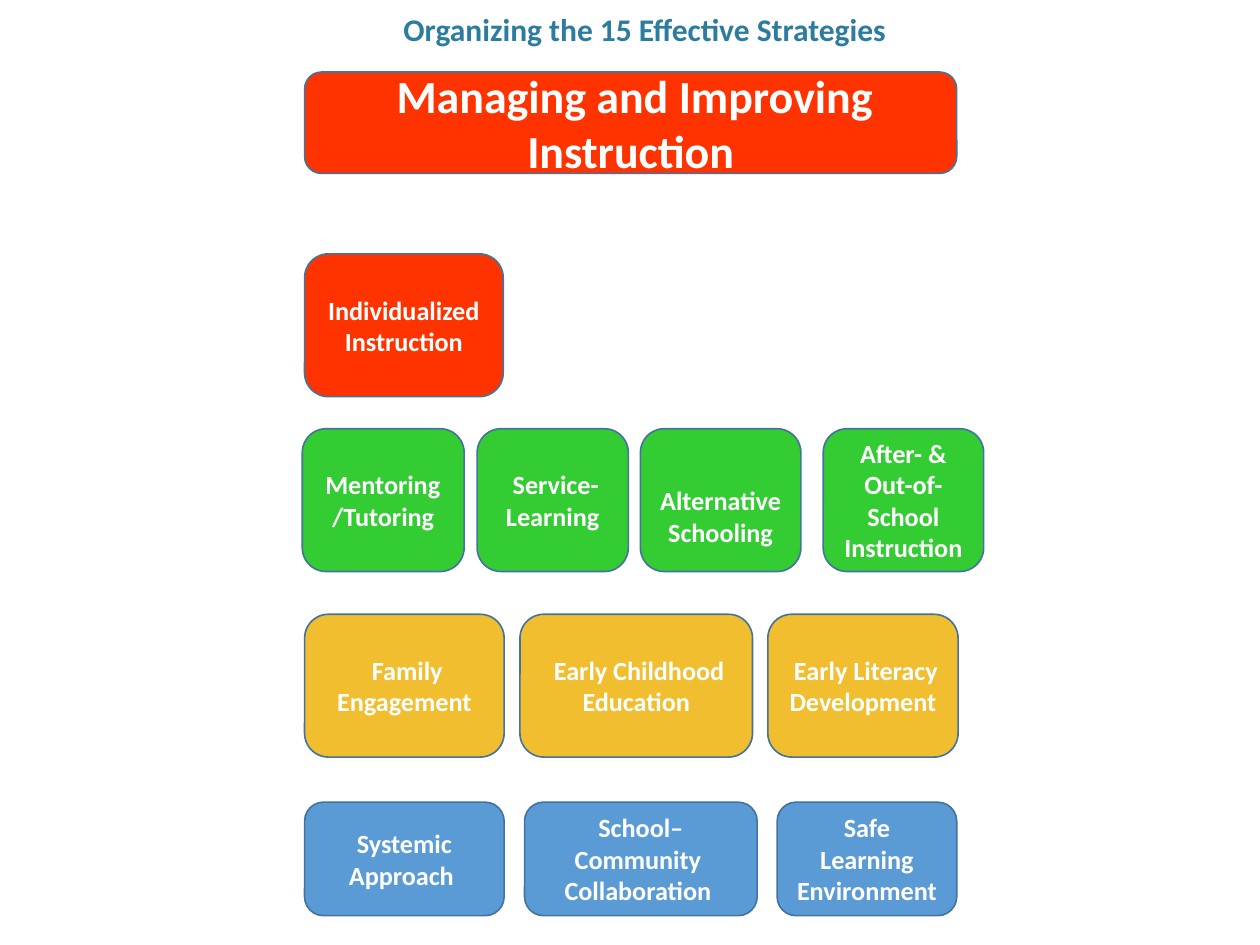
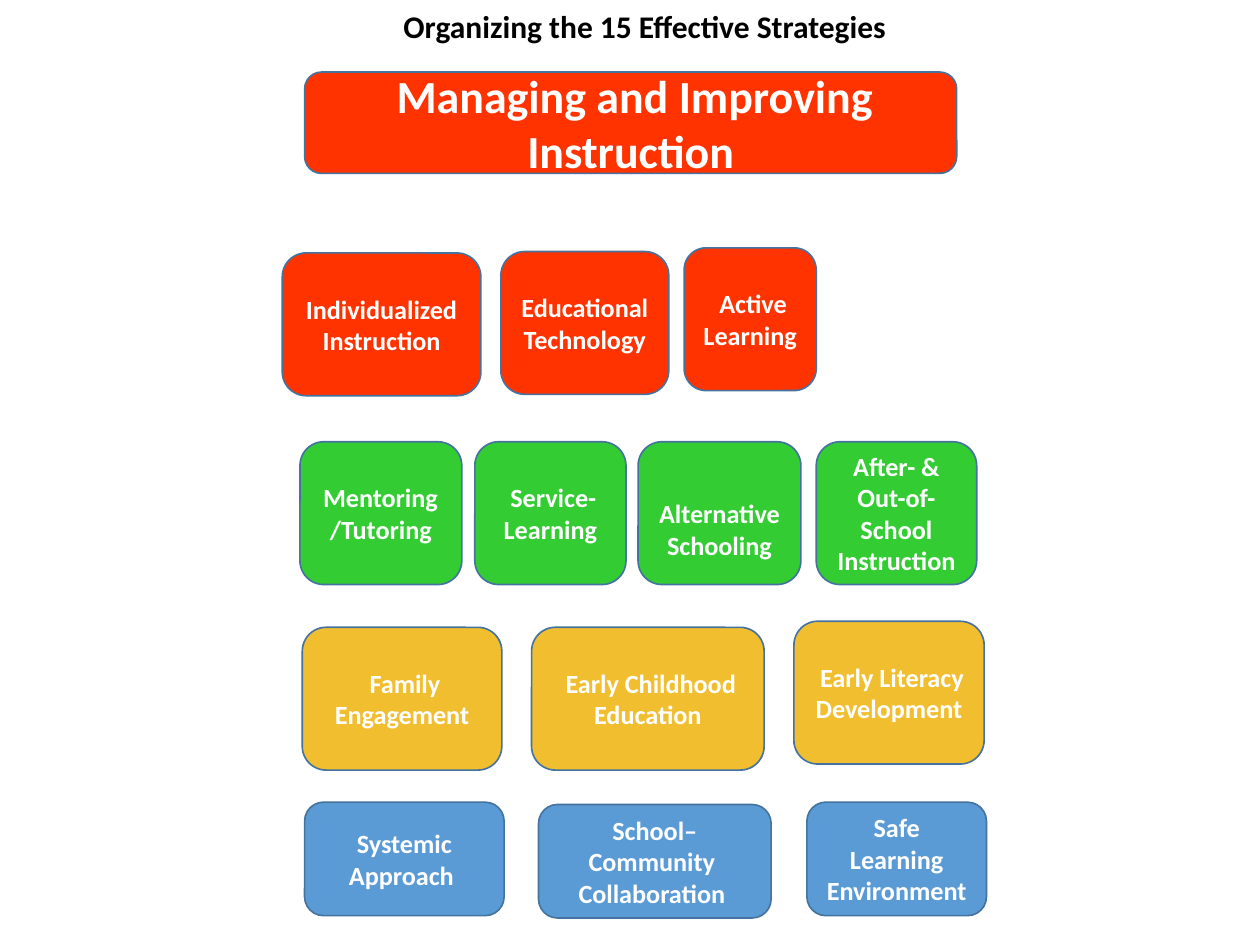
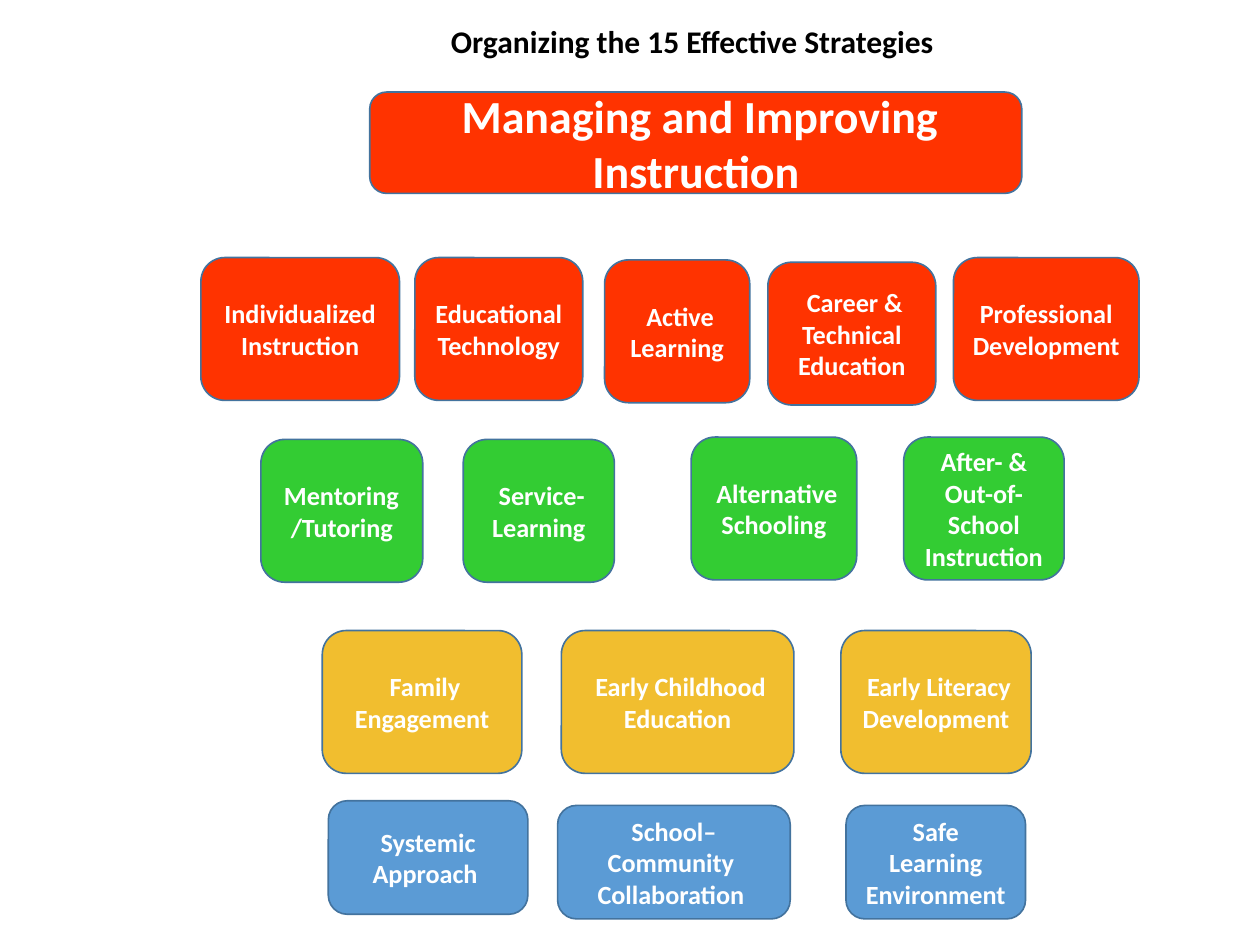
from pptx import Presentation
from pptx.dml.color import RGBColor
from pptx.enum.shapes import MSO_SHAPE
from pptx.enum.text import MSO_ANCHOR, MSO_AUTO_SIZE, PP_ALIGN
from pptx.util import Cm, Pt

ROUNDED = MSO_SHAPE.ROUNDED_RECTANGLE
CENTER = PP_ALIGN.CENTER
MIDDLE, BOTTOM = MSO_ANCHOR.MIDDLE, MSO_ANCHOR.BOTTOM
NO_FIT = MSO_AUTO_SIZE.NONE

RED = RGBColor(0xFF, 0x33, 0x00)
GREEN = RGBColor(0x33, 0xCC, 0x33)
GOLD = RGBColor(0xF1, 0xBE, 0x2F)
BLUE = RGBColor(0x5B, 0x9B, 0xD5)
OUTLINE = RGBColor(0x43, 0x73, 0x9E)
TEAL = RGBColor(0x2C, 0x7C, 0x9F)
BLACK = RGBColor(0, 0, 0)
WHITE = RGBColor(0xFF, 0xFF, 0xFF)
FONT = "Calibri"

TITLE = "Organizing the 15 Effective Strategies"
BANNER = "Managing and Improving Instruction"
TITLE_SIZE = (14.63, 1.02)
BANNER_SIZE = (14.02, 2.18)

# Strategy groups: colour, box height in cm, and (text, width in cm) per strategy
GROUPS = {
    "foundation": (BLUE, 2.44, [
        ("Systemic Approach ", 4.29),
        ("School– Community \nCollaboration ", 5.0),
        ("Safe Learning Environment", 3.86)]),
    "early": (GOLD, 3.07, [
        (" Family Engagement", 4.29),
        (" Early Childhood Education", 5.0),
        (" Early Literacy Development", 4.09)]),
    "core": (GREEN, 3.07, [
        ("Mentoring/Tutoring", 3.48),
        (" Service- Learning", 3.25),
        (" Alternative Schooling", 3.45),
        ("After- & Out-of-School Instruction", 3.45)]),
    "instruction": (RED, 3.07, [
        ("Individualized Instruction", 4.27),
        ("Educational Technology", 3.61),
        (" Active Learning", 2.84),
        (" Career & Technical Education", 3.61),
        ("Professional Development", 3.99)]),
}

# Places in cm: (left, top), with a third value where a box has its own width
PAGES = [
    {"title": (6.55, 0.1), "title_color": TEAL, "anchor": BOTTOM, "spacing": 1.0,
     "inset": (0.2, 0.1), "banner": (6.55, 1.55),
     "foundation": [(6.55, 17.25), (11.28, 17.25), (16.71, 17.25)],
     "early": [(6.55, 13.21), (11.18, 13.21), (16.51, 13.21)],
     "core": [(6.5, 9.22), (10.26, 9.22), (13.77, 9.22), (17.7, 9.22)],
     "instruction": [(6.55, 5.46)]},
    {"title": (6.55, 0.1), "title_color": BLACK, "anchor": MIDDLE, "spacing": 0.9,
     "inset": (0.25, 0.13), "banner": (6.55, 1.55),
     "foundation": [(6.55, 17.25), (11.58, 17.3), (17.35, 17.25)],
     "early": [(6.5, 13.49), (11.43, 13.49), (17.07, 13.36)],
     "core": [(6.45, 9.5), (10.21, 9.5), (13.72, 9.5, 3.5), (17.55, 9.5)],
     "instruction": [(6.07, 5.44), (10.77, 5.41), (14.71, 5.33)]},
    {"title": (7.57, 0.43), "title_color": BLACK, "anchor": MIDDLE, "spacing": 0.9,
     "inset": (0.25, 0.13), "banner": (7.95, 1.98),
     "foundation": [(7.06, 17.22), (11.99, 17.32), (18.19, 17.32)],
     "early": [(6.93, 13.56), (12.07, 13.56), (18.08, 13.56)],
     "core": [(5.61, 9.45), (9.96, 9.45), (14.86, 9.4, 3.56), (19.43, 9.4)],
     "instruction": [(4.32, 5.54), (8.92, 5.54), (13.0, 5.59, 3.12),
                     (16.51, 5.64), (20.5, 5.54)]},
]


def style_span(span, size, color):
    span.font.name = FONT
    span.font.size = Pt(size)
    span.font.bold = True
    span.font.color.rgb = color


def add_box(page, place, size, fill, text):
    box = page.shapes.add_shape(ROUNDED, *map(Cm, (*place, *size)))
    box.shadow.inherit = False
    box.fill.solid()
    box.fill.fore_color.rgb = fill
    box.line.color.rgb = OUTLINE
    box.line.width = Pt(1)
    frame = box.text_frame
    frame.word_wrap = True
    frame.vertical_anchor = MIDDLE
    frame.text = text
    for para in frame.paragraphs:
        para.alignment = CENTER
        for span in para.runs:
            style_span(span, 16, WHITE)
    return box


def add_title(page, layout):
    title = page.shapes.title
    title.left, title.top = map(Cm, layout["title"])
    title.width, title.height = map(Cm, TITLE_SIZE)
    frame = title.text_frame
    frame.text = TITLE
    frame.word_wrap = True
    frame.auto_size = NO_FIT
    frame.vertical_anchor = layout["anchor"]
    side, edge = map(Cm, layout["inset"])
    frame.margin_left = frame.margin_right = side
    frame.margin_top = frame.margin_bottom = edge
    para = frame.paragraphs[0]
    para.alignment = CENTER
    para.line_spacing = layout["spacing"]
    style_span(para.runs[0], 19.2, layout["title_color"])


def add_banner(page, place):
    banner = add_box(page, place, BANNER_SIZE, RED, " ")
    para = banner.text_frame.paragraphs[0]
    style_span(para.runs[0], 20.8, WHITE)
    span = para.add_run()
    span.text = BANNER
    style_span(span, 28, WHITE)


def add_group(page, name, places):
    color, height, strategies = GROUPS[name]
    for (text, usual_width), (left, top, *own_width) in zip(strategies, places):
        width = own_width[0] if own_width else usual_width
        add_box(page, (left, top), (width, height), color, text)


def main():
    deck = Presentation()
    deck.slide_width, deck.slide_height = Cm(27.09), Cm(20.32)
    title_only = deck.slide_layouts[5]
    for layout in PAGES:
        page = deck.slides.add_slide(title_only)
        add_title(page, layout)
        add_banner(page, layout["banner"])
        for name in GROUPS:
            add_group(page, name, layout[name])
    deck.save("out.pptx")


if __name__ == "__main__":
    main()
